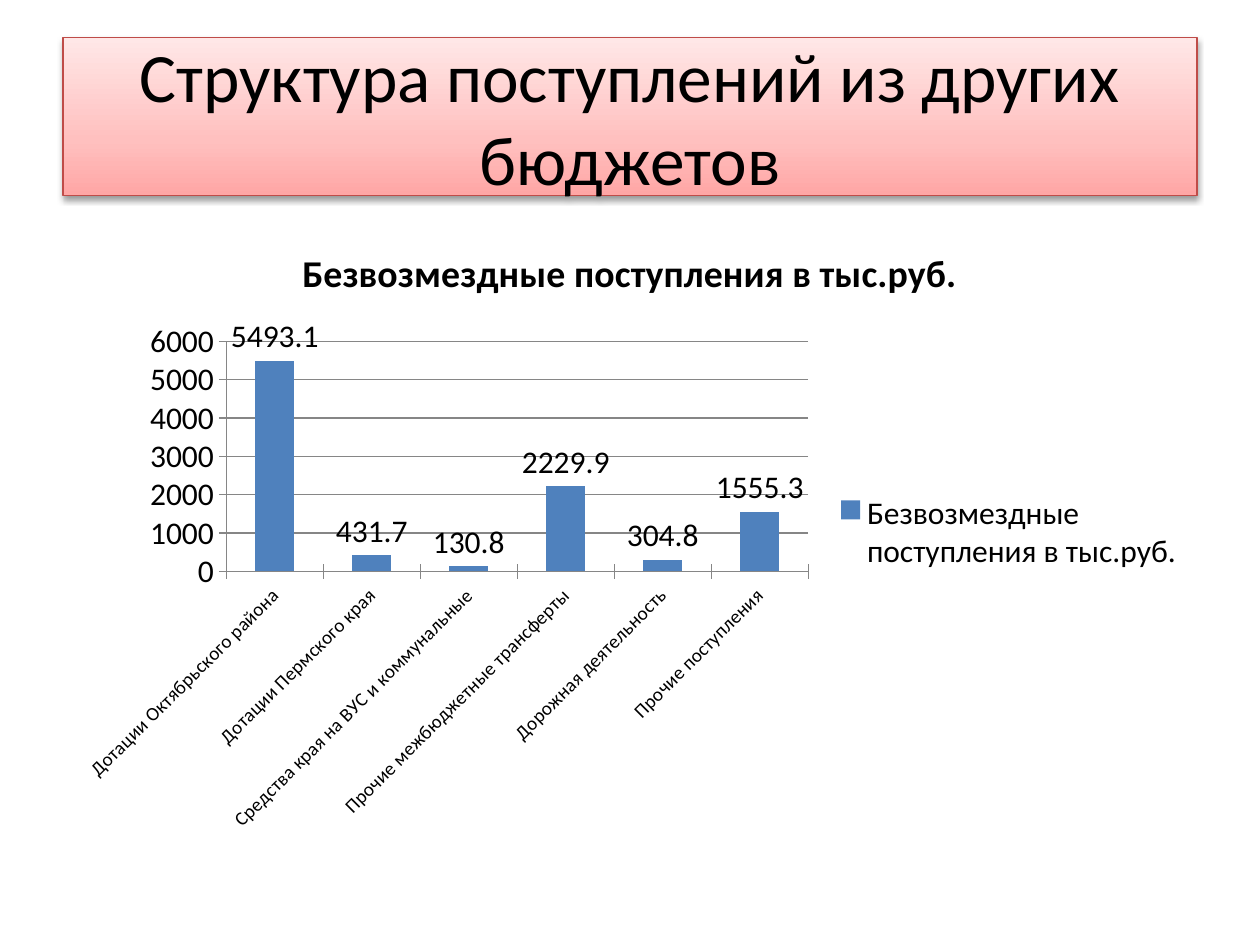
from copy import deepcopy
from dataclasses import dataclass

from lxml.etree import SubElement
from pptx import Presentation
from pptx.chart.data import CategoryChartData
from pptx.dml.color import RGBColor as RGB
from pptx.enum.chart import XL_CHART_TYPE as ChartType
from pptx.enum.chart import XL_LABEL_POSITION as LabelPos
from pptx.enum.chart import XL_LEGEND_POSITION as LegendPos
from pptx.enum.chart import XL_TICK_MARK as Tick
from pptx.enum.text import MSO_ANCHOR as Anchor
from pptx.enum.text import PP_ALIGN as Align
from pptx.oxml.ns import qn
from pptx.util import Inches, Pt


@dataclass(frozen=True)
class Theme:
    """Colours, font and type sizes of the slide."""

    font: str = "Calibri"
    text: str = "000000"
    bar: str = "4F81BD"
    grid: str = "868686"
    border: str = "BF4C48"
    gradient: tuple = ((0, "FFA6A5"), (0.35, "FFC0BF"), (1, "FFE7E7"))
    title: float = 39.6
    chart_title: float = 21.6
    chart: float = 18
    category: float = 11


THEME = Theme()
TITLE = "Структура поступлений из других бюджетов"
SERIES = "Безвозмездные поступления в тыс.руб."
RECEIPTS = {
    "Дотации Октябрьского района": 5493.1,
    "Дотации Пермского края": 431.7,
    "Средства края на ВУС и коммунальные": 130.8,
    "Прочие межбюджетные трансферты": 2229.9,
    "Дорожная деятельность": 304.8,
    "Прочие поступления": 1555.3,
}


def style_font(font, size, bold=False):
    """Apply the theme font and text colour at the given size."""
    font.name, font.size, font.bold = THEME.font, Pt(size), bold
    font.color.rgb = RGB.from_string(THEME.text)


def fill_gradient(sp):
    """Fill a shape with the theme gradient, first stop at the bottom."""
    sp.fill.gradient()
    sp.fill.gradient_angle = 90
    stop_list = sp.element.spPr.find(qn("a:gradFill")).find(qn("a:gsLst"))
    stop_list.insert(1, deepcopy(stop_list[0]))
    for stop, (position, color) in zip(sp.fill.gradient_stops, THEME.gradient):
        stop.position = position
        stop.color.rgb = RGB.from_string(color)


def add_shadow(sp):
    """Give a shape a soft shadow straight below it."""
    sp.shadow.inherit = False
    effects = sp.element.spPr.find(qn("a:effectLst"))
    shadow = SubElement(effects, qn("a:outerShdw"), blurRad=str(Pt(3.1)),
                        dist=str(Pt(1.6)), dir="5400000", rotWithShape="0")
    color = SubElement(shadow, qn("a:srgbClr"), val="000000")
    SubElement(color, qn("a:alpha"), val="38000")


def format_title(sp):
    """Place the title and draw it as a banner."""
    sp.left, sp.top = Inches(0.5), Inches(0.3)
    sp.width, sp.height = Inches(9), Inches(1.25)
    fill_gradient(sp)
    sp.line.color.rgb = RGB.from_string(THEME.border)
    sp.line.width = Pt(0.75)
    add_shadow(sp)
    tf = sp.text_frame
    tf.text = TITLE
    tf.word_wrap = True
    tf.vertical_anchor = Anchor.MIDDLE
    p = tf.paragraphs[0]
    p.alignment = Align.CENTER
    style_font(p.font, THEME.title)


def format_axes(chart):
    """Style both axes, the gridlines and the slanted category labels."""
    line_color = RGB.from_string(THEME.grid)
    category, value = chart.category_axis, chart.value_axis
    for axis, size in ((category, THEME.category), (value, THEME.chart)):
        axis.major_tick_mark = Tick.CROSS
        axis.minor_tick_mark = Tick.NONE
        axis.format.line.color.rgb = line_color
        style_font(axis.tick_labels.font, size)
    value.has_major_gridlines = True
    value.major_gridlines.format.line.color.rgb = line_color
    category.format.line.width = value.format.line.width = Pt(0.75)
    value.major_gridlines.format.line.width = Pt(0.75)
    body = category.tick_labels.font._element.getparent().getparent().getparent()
    body.find(qn("a:bodyPr")).set("rot", "-2700000")


def format_series(chart):
    """Colour the columns and show their values above them."""
    plot = chart.plots[0]
    plot.vary_by_categories = False
    plot.gap_width = 150
    series = plot.series[0]
    series.format.fill.solid()
    series.format.fill.fore_color.rgb = RGB.from_string(THEME.bar)
    labels = series.data_labels
    labels.show_value = True
    labels.position = LabelPos.OUTSIDE_END
    style_font(labels.font, THEME.chart)


def add_receipts_chart(slide):
    """Add the column chart of receipts with its title and legend."""
    data = CategoryChartData()
    data.categories = list(RECEIPTS)
    data.add_series(SERIES, list(RECEIPTS.values()))
    chart = slide.shapes.add_chart(
        ChartType.COLUMN_CLUSTERED, Inches(0.5), Inches(1.75),
        Inches(9), Inches(4.95), data).chart
    style_font(chart.font, THEME.chart)
    chart.has_title = True
    tf = chart.chart_title.text_frame
    tf.text = SERIES
    style_font(tf.paragraphs[0].font, THEME.chart_title, bold=True)
    chart.has_legend = True
    chart.legend.position = LegendPos.RIGHT
    chart.legend.include_in_layout = False
    style_font(chart.legend.font, THEME.chart)
    format_axes(chart)
    format_series(chart)


def main():
    """Build the slide and save it."""
    prs = Presentation()
    prs.slide_width, prs.slide_height = Inches(10), Inches(7.5)
    slide = prs.slides.add_slide(prs.slide_layouts[5])
    format_title(slide.shapes.title)
    add_receipts_chart(slide)
    prs.save("out.pptx")


if __name__ == "__main__":
    main()
